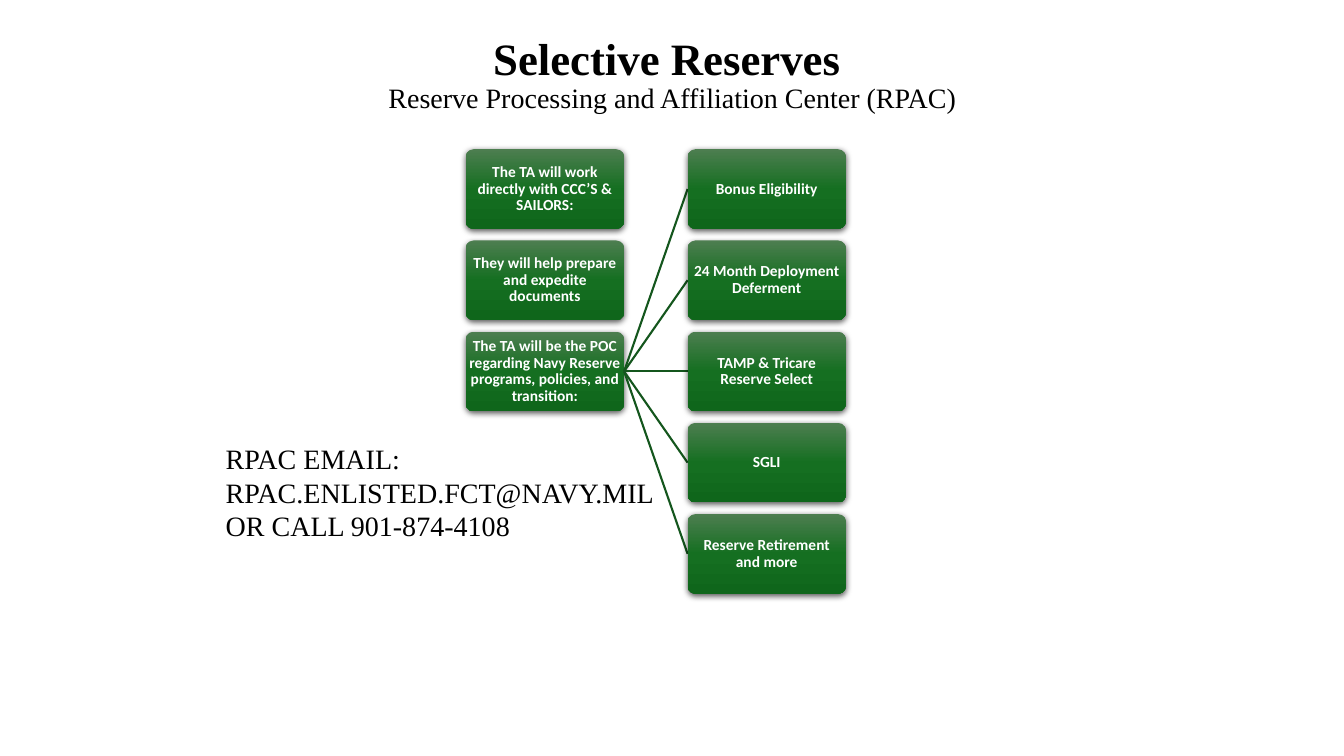
from copy import deepcopy
from typing import NamedTuple

from lxml import etree
from pptx import Presentation
from pptx.dml.color import RGBColor
from pptx.enum.shapes import MSO_CONNECTOR, MSO_SHAPE
from pptx.enum.text import MSO_ANCHOR, PP_ALIGN
from pptx.oxml.ns import qn
from pptx.util import Inches, Pt

ROUNDED = MSO_SHAPE.ROUNDED_RECTANGLE
STRAIGHT = MSO_CONNECTOR.STRAIGHT
TOP, MIDDLE = MSO_ANCHOR.TOP, MSO_ANCHOR.MIDDLE
LEFT, CENTER = PP_ALIGN.LEFT, PP_ALIGN.CENTER

BLACK = RGBColor(0x00, 0x00, 0x00)
WHITE = RGBColor(0xFF, 0xFF, 0xFF)
LINK_GREEN = RGBColor(0x14, 0x56, 0x1D)
CARD_GRADIENT = (
    (0, RGBColor(0x4D, 0x7E, 0x50)),
    (0.5, RGBColor(0x15, 0x6F, 0x21)),
    (1, RGBColor(0x0F, 0x66, 0x1B)),
)
SERIF, SANS = "Times New Roman", "Calibri"

CARD_WIDTH, CARD_HEIGHT = 1.57, 0.79
FIRST_TOP, LAST_TOP = 1.48, 5.1
ROLE_LEFT, TOPIC_LEFT = 4.62, 6.82
ROLES = (
    "The TA will work directly with CCC’S & SAILORS:",
    "They will help prepare and expedite documents",
    "The TA will be the POC regarding Navy Reserve programs, policies, and transition:",
)
TOPICS = (
    "Bonus Eligibility",
    "24 Month Deployment Deferment",
    "TAMP & Tricare Reserve Select",
    "SGLI",
    "Reserve Retirement and more",
)
CARD_PITCH = (LAST_TOP - FIRST_TOP) / (len(TOPICS) - 1)
CONTACT = ("RPAC EMAIL:", "RPAC.ENLISTED.FCT@NAVY.MIL", "OR CALL 901-874-4108")


class Card(NamedTuple):
    text: str
    left: float
    row: int

    @property
    def top(self) -> float:
        return FIRST_TOP + self.row * CARD_PITCH

    @property
    def middle(self) -> float:
        return self.top + CARD_HEIGHT / 2


def add_span(para, text: str, *, size: float, font: str = SERIF,
             color: RGBColor = BLACK, bold: bool = False) -> None:
    span = para.add_run()
    span.text = text
    span.font.name = font
    span.font.size = Pt(size)
    span.font.bold = bold
    span.font.color.rgb = color


def set_frame(frame, *, anchor=TOP, align=LEFT, line_spacing: float = 1.0):
    """Format a text frame and return its first paragraph."""
    frame.word_wrap = True
    frame.vertical_anchor = anchor
    para = frame.paragraphs[0]
    para.alignment = align
    para.line_spacing = line_spacing
    return para


def add_card_shadow(shape) -> None:
    shape.shadow.inherit = False
    effects = shape._element.spPr.find(qn("a:effectLst"))
    shadow = etree.SubElement(effects, qn("a:outerShdw"), blurRad=str(Pt(4.5)),
                              dist=str(Pt(1.5)), dir="5400000", rotWithShape="0")
    color = etree.SubElement(shadow, qn("a:srgbClr"), val=str(BLACK))
    etree.SubElement(color, qn("a:alpha"), val="63000")


def fill_card(shape) -> None:
    """Fill with the three-stop gradient, running from top to bottom."""
    shape.fill.gradient()
    stops = next(shape._element.spPr.iter(qn("a:gsLst")))
    stops.append(deepcopy(stops[0]))
    shape.fill.gradient_angle = 270
    for stop, (position, color) in zip(shape.fill.gradient_stops, CARD_GRADIENT):
        stop.position = position
        stop.color.rgb = color


def add_card(page, card: Card) -> None:
    shape = page.shapes.add_shape(ROUNDED, Inches(card.left), Inches(card.top),
                                  Inches(CARD_WIDTH), Inches(CARD_HEIGHT))
    shape.adjustments[0] = 0.1
    fill_card(shape)
    shape.line.fill.background()
    add_card_shadow(shape)
    frame = shape.text_frame
    frame.margin_left = frame.margin_right = Inches(0.01)
    frame.margin_top = frame.margin_bottom = Inches(0.01)
    para = set_frame(frame, anchor=MIDDLE, align=CENTER, line_spacing=0.9)
    add_span(para, card.text, size=11, font=SANS, color=WHITE, bold=True)


def add_link(page, start: Card, end: Card) -> None:
    link = page.shapes.add_connector(
        STRAIGHT, Inches(start.left + CARD_WIDTH), Inches(start.middle),
        Inches(end.left), Inches(end.middle))
    link.line.color.rgb = LINK_GREEN
    link.line.width = Pt(1.5)
    etree.SubElement(link._element.spPr, qn("a:effectLst"))


def add_contact(page) -> None:
    box = page.shapes.add_textbox(Inches(2.14), Inches(4.33), Inches(5.45), Inches(1.41))
    para = set_frame(box.text_frame)
    for index, text in enumerate(CONTACT):
        if index:
            para = box.text_frame.add_paragraph()
        add_span(para, text, size=20)


def add_title(page) -> None:
    box = page.shapes.add_textbox(Inches(0), Inches(0.01), Inches(13.34), Inches(1.48))
    para = set_frame(box.text_frame, anchor=MIDDLE, align=CENTER, line_spacing=0.9)
    add_span(para, "Selective Reserves ", size=32, bold=True)
    para.add_line_break()
    add_span(para, "Reserve Processing and Affiliation Center (RPAC)", size=20)


def main() -> None:
    deck = Presentation()
    deck.slide_width, deck.slide_height = Inches(13.33), Inches(7.5)
    page = deck.slides.add_slide(deck.slide_layouts[6])

    roles = [Card(text, ROLE_LEFT, row) for row, text in enumerate(ROLES)]
    topics = [Card(text, TOPIC_LEFT, row) for row, text in enumerate(TOPICS)]
    for role in roles:
        add_card(page, role)
    for topic in topics:
        add_link(page, roles[-1], topic)
        add_card(page, topic)
    add_contact(page)
    add_title(page)
    deck.save("out.pptx")


if __name__ == "__main__":
    main()
